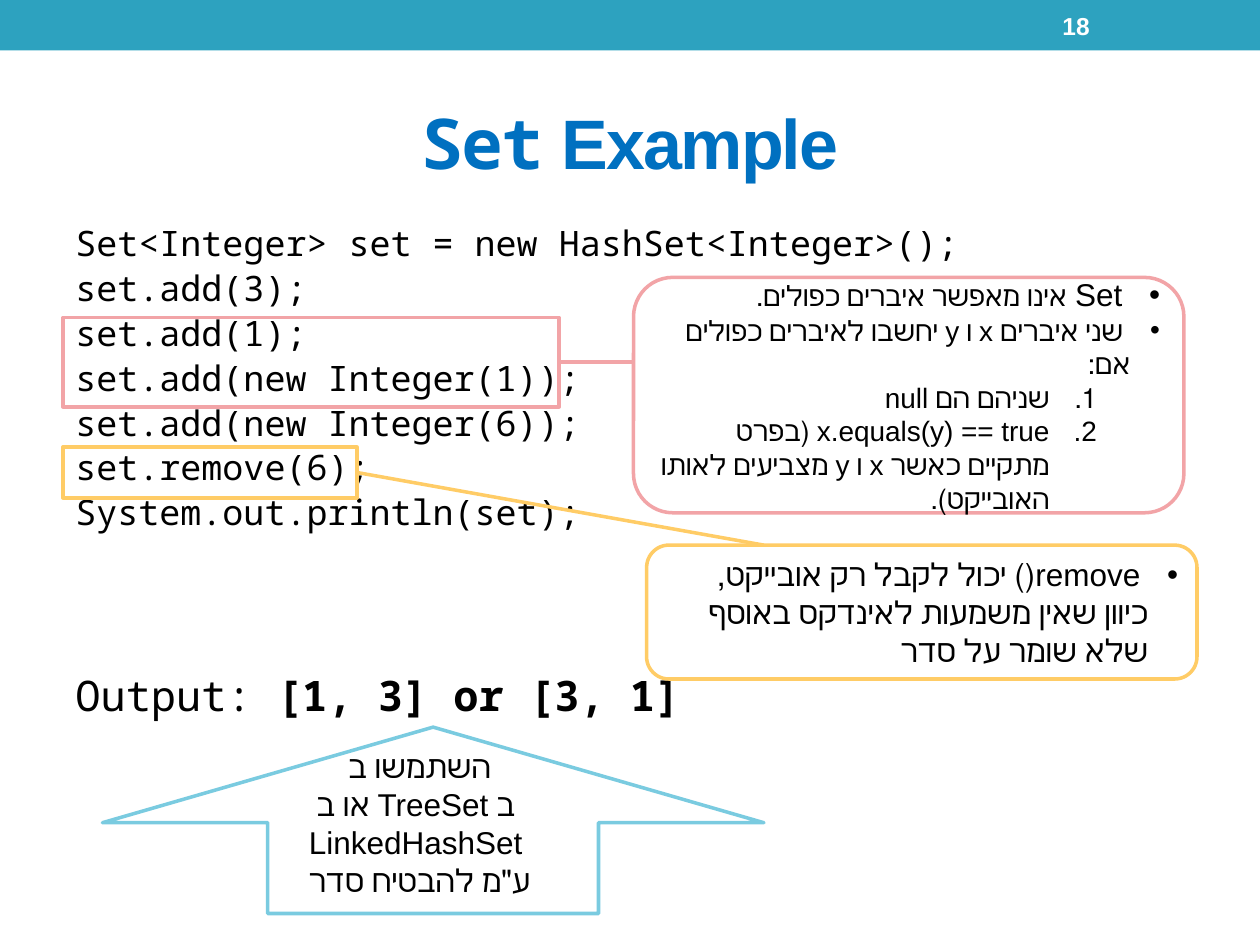
import pptx
import pptx.dml.color
import pptx.enum.shapes
import pptx.enum.text
import pptx.oxml.ns
import pptx.util
from lxml import etree

Pt = pptx.util.Pt
qn = pptx.oxml.ns.qn
rgb = pptx.dml.color.RGBColor.from_string
SHAPE = pptx.enum.shapes.MSO_SHAPE
ALIGN = pptx.enum.text.PP_ALIGN
MIDDLE = pptx.enum.text.MSO_ANCHOR.MIDDLE
MONO, SANS = "Noto Sans Mono", "Arial"
PINK, YELLOW, CYAN = "F2A4A7", "FFCC66", "7ACBE0"

prs = pptx.Presentation()
prs.slide_width, prs.slide_height = Pt(720), Pt(540)
slide = prs.slides.add_slide(prs.slide_layouts[5])


def add_outline(kind, left, top, width, height, color):
    s = slide.shapes.add_shape(kind, Pt(left), Pt(top), Pt(width), Pt(height))
    s.shadow.inherit = False
    s.fill.background()
    s.line.color.rgb = rgb(color)
    s.line.width = Pt(2)
    return s


def write(tf, i, text, font, size, color="000000", align=ALIGN.LEFT, rtl=False):
    p = tf.paragraphs[0] if i == 0 else tf.add_paragraph()
    p.alignment = align
    if rtl:
        p._p.get_or_add_pPr().set("rtl", "1")
    p.font.name, p.font.size = font, Pt(size)
    p.font.color.rgb = rgb(color)
    if text:
        p.add_run().text = text
    return p


# Header bar with slide number
s = slide.shapes.add_shape(SHAPE.RECTANGLE, 0, 0, Pt(720), Pt(28.8))
s.shadow.inherit = False
s.fill.solid()
s.fill.fore_color.rgb = rgb("2DA2BF")
s.line.fill.background()
tf = slide.shapes.add_textbox(Pt(600), Pt(1.5), Pt(84), Pt(26)).text_frame
tf.word_wrap = True
tf.vertical_anchor = MIDDLE
write(tf, 0, "18", SANS, 14, "FFFFFF").font.bold = True

# Title
title = slide.shapes.title
title.left, title.top, title.width, title.height = Pt(36), Pt(42), Pt(648), Pt(78)
title.text_frame.vertical_anchor = MIDDLE
p = write(title.text_frame, 0, "", SANS, 40, "0070C0", ALIGN.CENTER)
p.font.bold = True
for text, font in (("Set", MONO), (" Example", SANS)):
    r = p.add_run()
    r.text = text
    r.font.name = font
    r.font._element.set("spc", "-100")

# Code
code = (
    "Set<Integer> set = new HashSet<Integer>();",
    "set.add(3);",
    "set.add(1);",
    "set.add(new Integer(1));",
    "set.add(new Integer(6));",
    "set.remove(6);",
    "System.out.println(set);",
)
tf = slide.shapes.add_textbox(Pt(36), Pt(126), Pt(648), Pt(384)).text_frame
tf.word_wrap = True
for i, line in enumerate(code):
    p = write(tf, i, line, MONO, 20)
    p.line_spacing, p.space_before = 0.9, Pt(4)

# Output
tf = slide.shapes.add_textbox(Pt(36), Pt(379), Pt(376), Pt(36.5)).text_frame
tf.word_wrap = True
p = write(tf, 0, "Output: ", MONO, 24)
r = p.add_run()
r.text = "[1, 3] or [3, 1]"
r.font.bold = True

# Code highlights and their connectors
add_outline(SHAPE.RECTANGLE, 36, 181.5, 283.5, 51, PINK)
add_outline(SHAPE.RECTANGLE, 36, 255.5, 168, 29, YELLOW)
for x1, y1, x2, y2, color in (
    (319.5, 207, 362, 207, PINK),
    (204, 270, 436.5, 311.5, YELLOW),
):
    c = slide.shapes.add_connector(
        pptx.enum.shapes.MSO_CONNECTOR.STRAIGHT, Pt(x1), Pt(y1), Pt(x2), Pt(y2))
    c.line.color.rgb = rgb(color)
    c.line.width = Pt(2)
    etree.SubElement(c._element.spPr, qn("a:effectLst"))

# Callouts: box, then items of (numbered, runs with their sizes)
callouts = (
    ((362, 158.5, 314.5, 134.5, PINK), (
        (False, ((" Set ", 18), ("אינו מאפשר איברים כפולים.", 16))),
        (False, ((" שני איברים x ו y יחשבו לאיברים כפולים אם:", 16),)),
        (True, (("שניהם הם null", 16),)),
        (True, (("x.equals(y) == true (בפרט מתקיים כאשר x ו y מצביעים לאותו האובייקט).", 16),)),
    )),
    ((369.5, 311.5, 314.5, 76.5, YELLOW), (
        (False, ((" remove() יכול לקבל רק אובייקט, כיוון שאין משמעות לאינדקס באוסף שלא שומר על סדר", 18),)),
    )),
)
for box, items in callouts:
    tf = add_outline(SHAPE.ROUNDED_RECTANGLE, *box).text_frame
    tf.word_wrap = True
    tf.vertical_anchor = MIDDLE
    for i, (numbered, runs) in enumerate(items):
        p = write(tf, i, "", SANS, runs[-1][1], align=ALIGN.RIGHT, rtl=True)
        for text, size in runs:
            r = p.add_run()
            r.text = text
            r.font.size = Pt(size)
        pPr = p._p.get_or_add_pPr()
        margin, hanging = (63, 27) if numbered else (17, 17)
        pPr.set("marL", str(Pt(margin)))
        pPr.set("marR", "0")
        pPr.set("indent", str(-Pt(hanging)))
        if numbered:
            p.level = 1
            bullet = etree.Element(qn("a:buAutoNum"), type="arabicPeriod")
        else:
            bullet = etree.Element(qn("a:buChar"), char="•")
        defaults = pPr.find(qn("a:defRPr"))
        defaults.addprevious(etree.Element(qn("a:buFont"), typeface=SANS))
        defaults.addprevious(bullet)

# Arrow with advice
s = add_outline(SHAPE.UP_ARROW, 58.5, 415.5, 378, 106.5, CYAN)
s.adjustments[0], s.adjustments[1] = 0.5, 0.513
tf = slide.shapes.add_textbox(Pt(155), Pt(423.5), Pt(165), Pt(94.5)).text_frame
tf.word_wrap = True
for i, text in enumerate(("השתמשו ב ", "ב TreeSet או ב LinkedHashSet", "ע\"מ להבטיח סדר ")):
    write(tf, i, text, SANS, 18, align=ALIGN.CENTER, rtl=True)

prs.save("out.pptx")
